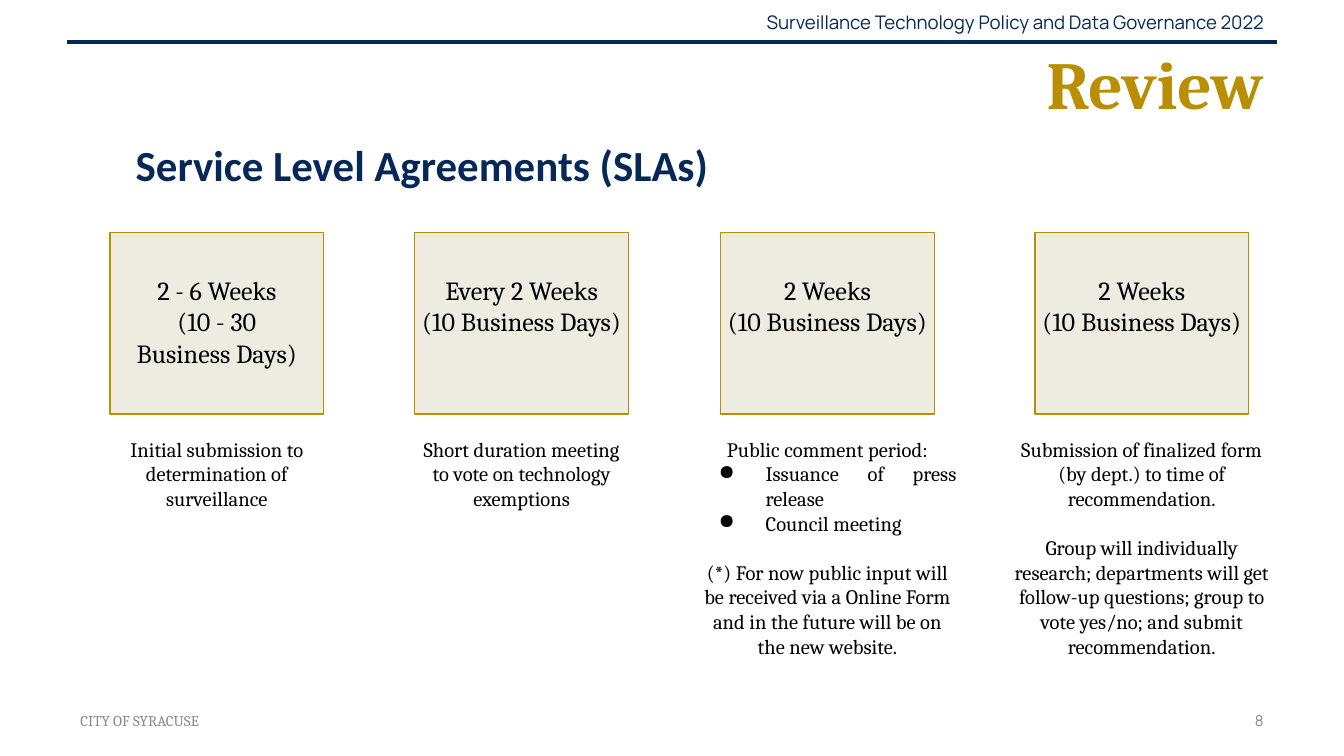
from dataclasses import dataclass

from lxml.etree import SubElement
from pptx import Presentation
from pptx.dml.color import RGBColor
from pptx.enum.shapes import MSO_CONNECTOR, MSO_SHAPE
from pptx.enum.text import MSO_ANCHOR, MSO_AUTO_SIZE, PP_ALIGN
from pptx.oxml.ns import qn
from pptx.slide import Slide
from pptx.text.text import TextFrame, _Paragraph
from pptx.util import Cm, Pt

NAVY = RGBColor(0x06, 0x28, 0x58)
GOLD = RGBColor(0xB9, 0x8E, 0x00)
CREAM = RGBColor(0xEE, 0xEC, 0xE1)
GRAY = RGBColor(0x88, 0x88, 0x88)
BLACK = RGBColor(0, 0, 0)


@dataclass
class Style:
    size: float
    font: str = "Cambria"
    color: RGBColor = BLACK
    bold: bool = False
    align: PP_ALIGN = PP_ALIGN.CENTER


@dataclass
class Line:
    text: str
    bullet: bool = False
    gap: float = 0


@dataclass
class Stage:
    center: float
    label: list[Line]
    width: float
    notes: list[Line]


HEAD = Style(10, "Manrope", NAVY, align=PP_ALIGN.RIGHT)
TITLE = Style(36, color=GOLD, bold=True, align=PP_ALIGN.RIGHT)
TOPIC = Style(23, "Calibri", NAVY, bold=True)
FOOT = Style(8, color=GRAY, align=PP_ALIGN.LEFT)
PAGE = Style(8, "Manrope", GRAY, align=PP_ALIGN.RIGHT)
LABEL = Style(14)
NOTE = Style(11)

BOX_W, BOX_H, BOX_TOP = 4.04, 3.43, 4.39
LABEL_W = 4.37
TEN_DAYS = Line("(10 Business Days)")

STAGES = [
    Stage(4.1, [Line("2 - 6 Weeks"), Line("(10 - 30"), Line("Business Days)")], 4.37,
          [Line("Initial submission to determination of surveillance")]),
    Stage(9.86, [Line("Every 2 Weeks"), TEN_DAYS], 4.37,
          [Line("Short duration meeting to vote on technology exemptions")]),
    Stage(15.64, [Line("2 Weeks"), TEN_DAYS], 5.38,
          [Line("Public comment period:"),
           Line("Issuance of press release", bullet=True),
           Line("Council meeting", bullet=True),
           Line("(*) For now public input will be received via a Online Form "
                "and in the future will be on the new website.", gap=13)]),
    Stage(21.58, [Line("2 Weeks"), TEN_DAYS], 5.38,
          [Line("Submission of finalized form (by dept.) to time of recommendation."),
           Line("Group will individually research; departments will get follow-up "
                "questions; group to vote yes/no; and submit recommendation.", gap=13)]),
]


def add_bullet(para: _Paragraph) -> None:
    para.alignment = PP_ALIGN.JUSTIFY
    props = para._p.get_or_add_pPr()
    props.set("marL", str(Cm(1.27)))
    props.set("indent", str(-Cm(0.89)))
    tint = SubElement(props, qn("a:buClr"))
    SubElement(tint, qn("a:srgbClr")).set("val", str(BLACK))
    SubElement(props, qn("a:buChar")).set("char", "●")


def fill_text(frame: TextFrame, lines: list[Line], style: Style,
              pad: float, anchor: MSO_ANCHOR) -> None:
    frame.word_wrap = True
    frame.auto_size = MSO_AUTO_SIZE.NONE
    frame.vertical_anchor = anchor
    frame.margin_left = frame.margin_right = Cm(0.25)
    frame.margin_top = frame.margin_bottom = Cm(pad)
    for i, line in enumerate(lines):
        para = frame.add_paragraph() if i else frame.paragraphs[0]
        para.text = line.text
        para.alignment = style.align
        para.space_before = Pt(line.gap)
        font = para.font
        font.size, font.name, font.bold = Pt(style.size), style.font, style.bold
        font.color.rgb = style.color
        if line.bullet:
            add_bullet(para)


def add_text(slide: Slide, left: float, top: float, width: float, height: float,
             lines: list[Line], style: Style, pad: float = 0.25,
             anchor: MSO_ANCHOR = MSO_ANCHOR.TOP) -> None:
    box = slide.shapes.add_textbox(Cm(left), Cm(top), Cm(width), Cm(height))
    fill_text(box.text_frame, lines, style, pad, anchor)


def add_bar(slide: Slide, text: str, left: float, top: float, width: float,
            style: Style) -> None:
    add_text(slide, left, top, width, 0.76, [Line(text)], style, 0.13, MSO_ANCHOR.MIDDLE)


def add_rule(slide: Slide) -> None:
    rule = slide.shapes.add_connector(
        MSO_CONNECTOR.STRAIGHT, Cm(1.27), Cm(0.79), Cm(24.13), Cm(0.79))
    rule.line.color.rgb = NAVY
    rule.line.width = Pt(2.25)
    SubElement(rule._element.spPr, qn("a:effectLst"))


def add_stage(slide: Slide, stage: Stage) -> None:
    box = slide.shapes.add_shape(
        MSO_SHAPE.RECTANGLE, Cm(stage.center - BOX_W / 2), Cm(BOX_TOP), Cm(BOX_W), Cm(BOX_H))
    box.shadow.inherit = False
    box.fill.solid()
    box.fill.fore_color.rgb = CREAM
    box.line.color.rgb = GOLD
    box.line.width = Pt(0.75)
    add_text(slide, stage.center - LABEL_W / 2, 4.93, LABEL_W,
             0.5 + 0.6 * len(stage.label), stage.label, LABEL)
    high = 1.93 if len(stage.notes) == 1 else 4.75
    add_text(slide, stage.center - stage.width / 2, 8, stage.width, high, stage.notes, NOTE)


def main() -> None:
    deck = Presentation()
    deck.slide_width, deck.slide_height = Cm(25.4), Cm(14.28)
    slide = deck.slides.add_slide(deck.slide_layouts[5])

    # Header and footer
    add_bar(slide, "Surveillance Technology Policy and Data Governance 2022",
            13.23, 0.03, 10.9, HEAD)
    add_rule(slide)
    add_bar(slide, "CITY OF SYRACUSE", 1.27, 13.23, 5.92, FOOT)
    add_bar(slide, "8", 18.21, 13.23, 5.92, PAGE)

    # Title and topic
    title = slide.shapes.title
    title.left, title.top, title.width, title.height = Cm(2.44), Cm(0.74), Cm(21.69), Cm(1.63)
    fill_text(title.text_frame, [Line("Review")], TITLE, 0.13, MSO_ANCHOR.MIDDLE)
    add_text(slide, 1.85, 2.36, 12.27, 1.7, [Line("Service Level Agreements (SLAs)")], TOPIC)

    # Stages
    for stage in STAGES:
        add_stage(slide, stage)

    deck.save("out.pptx")


if __name__ == "__main__":
    main()
